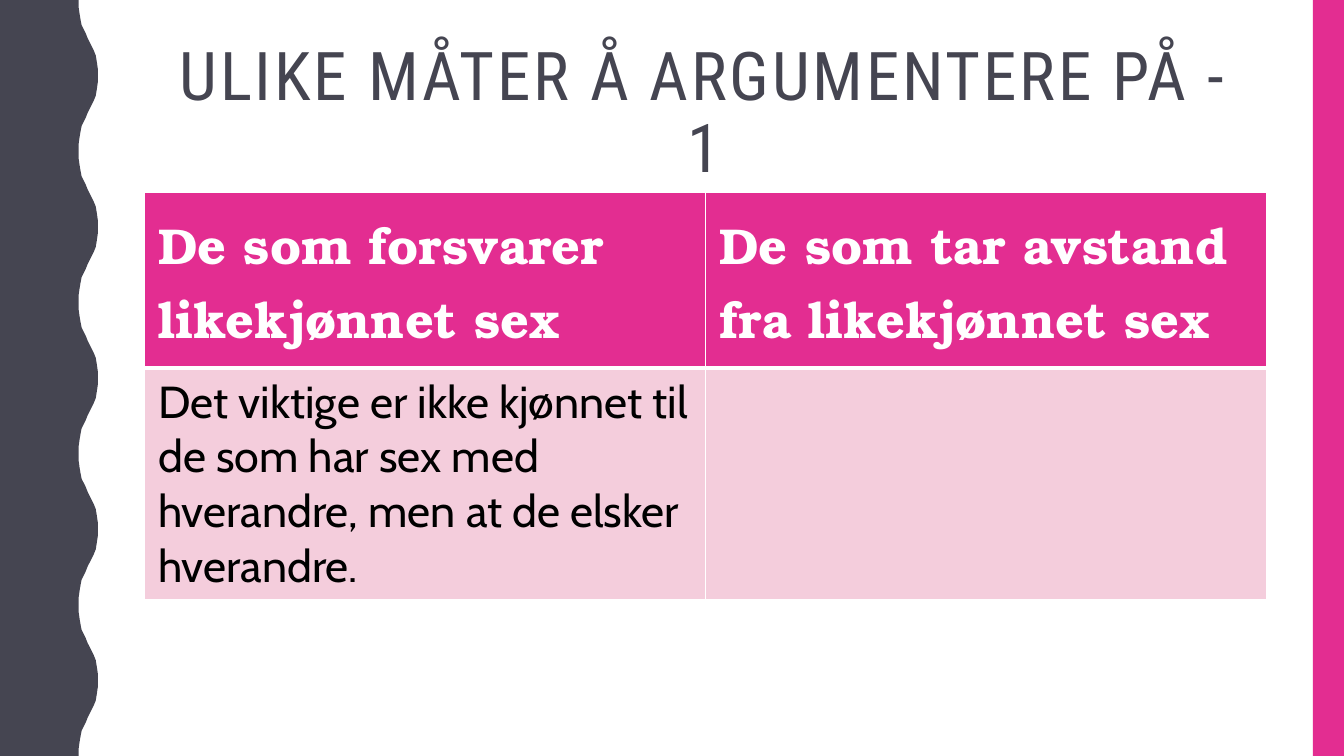
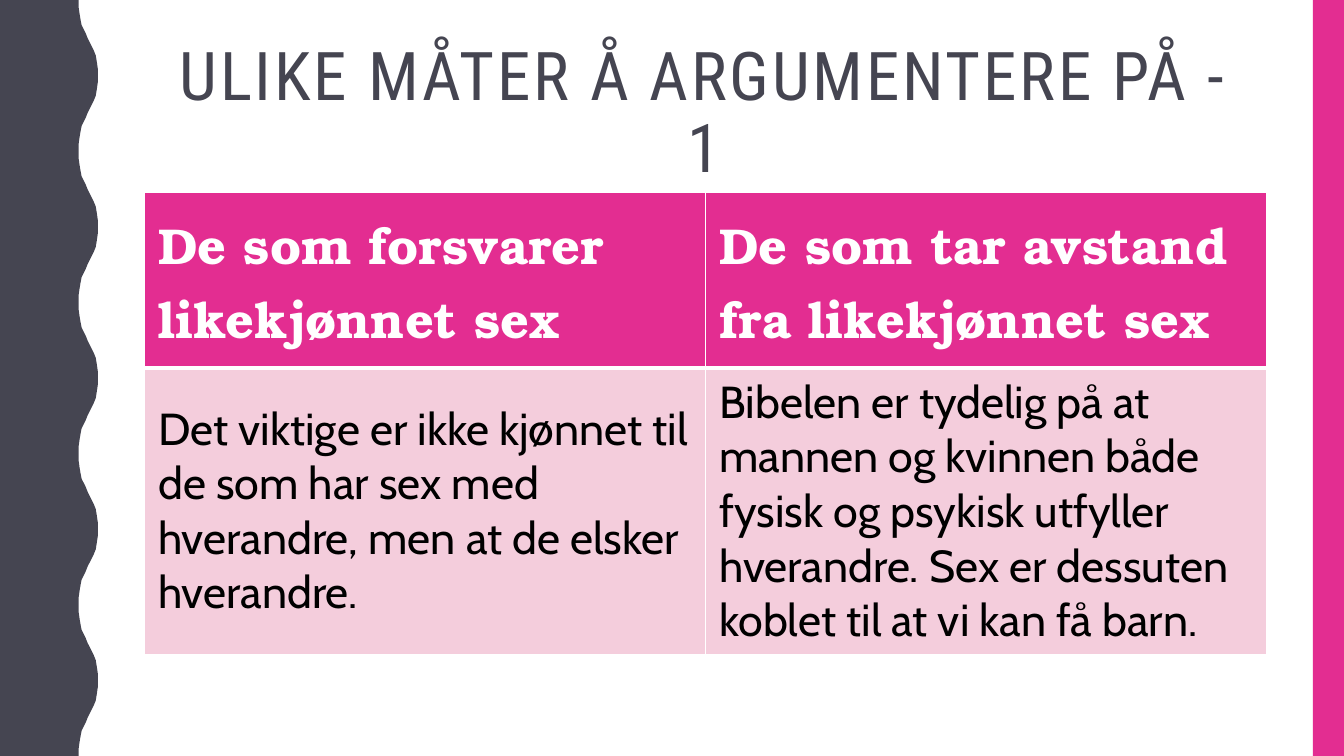
from lxml.etree import SubElement
from pptx import Presentation
from pptx.dml.color import RGBColor
from pptx.enum.shapes import MSO_SHAPE
from pptx.enum.text import MSO_ANCHOR, PP_ALIGN
from pptx.oxml.ns import qn
from pptx.util import Inches, Pt

SLATE = RGBColor(0x45, 0x45, 0x51)
PINK = RGBColor(0xE3, 0x2D, 0x91)
PALE_PINK = RGBColor(0xF4, 0xCD, 0xDC)
WHITE = RGBColor(0xFF, 0xFF, 0xFF)
BLACK = RGBColor(0, 0, 0)

TITLE_FONT, HEADING_FONT, BODY_FONT = "Roboto Condensed", "TeX Gyre Bonum", "Cabin"
WIDTH, HEIGHT = 13.33, 7.5
HEADING_HEIGHT = 1.74

# Outline of the wave from trough to crest, as (x, y) in inches
HALF_WAVE = [(0.78, 0), (0.78, 0.07), (0.79, 0.14), (0.8, 0.2), (0.81, 0.25),
             (0.83, 0.29), (0.85, 0.33), (0.87, 0.38), (0.89, 0.42), (0.91, 0.46),
             (0.93, 0.5), (0.95, 0.55), (0.96, 0.61), (0.97, 0.68), (0.97, 0.75)]
WAVE_LENGTH = 1.5

TITLE = "ULIKE MÅTER Å ARGUMENTERE PÅ - 1"
HEADINGS = ["De som forsvarer likekjønnet sex", "De som tar avstand fra likekjønnet sex"]
DEFENCE = ("Det viktige er ikke kjønnet til de som har sex med hverandre, "
           "men at de elsker hverandre.")
OBJECTION = ("Bibelen er tydelig på at mannen og kvinnen både fysisk og psykisk "
             "utfyller hverandre. Sex er dessuten koblet til at vi kan få barn.")


def paint(shape, color):
    shape.shadow.inherit = False
    shape.fill.solid()
    shape.fill.fore_color.rgb = color
    shape.line.fill.background()


def add_wave_band(slide, left, top, height):
    falling = [(x, WAVE_LENGTH - y) for x, y in reversed(HALF_WAVE[:-1])]
    wave = HALF_WAVE + falling
    edge = [(left + x, top + y + WAVE_LENGTH * turn)
            for turn in range(round(height / WAVE_LENGTH)) for x, y in wave]
    outline = edge + [(left, top + height)]
    builder = slide.shapes.build_freeform(Inches(left), Inches(top))
    builder.add_line_segments([(Inches(x), Inches(y)) for x, y in outline], close=True)
    paint(builder.convert_to_shape(), SLATE)


def add_side_bar(slide, left, top, width, height):
    bar = slide.shapes.add_shape(MSO_SHAPE.RECTANGLE, Inches(left), Inches(top),
                                 Inches(width), Inches(height))
    paint(bar, PINK)


def set_font(paragraph, name, size, color, bold=False):
    font = paragraph.font
    font.name, font.size, font.bold = name, Pt(size), bold
    font.color.rgb = color


def add_title(slide, left, top, width, height, text):
    frame = slide.shapes.add_textbox(Inches(left), Inches(top), Inches(width),
                                     Inches(height)).text_frame
    frame.word_wrap = True
    paragraph = frame.paragraphs[0]
    paragraph.alignment = PP_ALIGN.CENTER
    paragraph.line_spacing = 0.9
    run = paragraph.add_run()
    run.text = text
    set_font(paragraph, TITLE_FONT, 48, SLATE)
    run.font._element.set("spc", "200")


def set_borders(cell, **widths):
    """Give the cell white borders; widths are in points, by side."""
    properties = cell._tc.get_or_add_tcPr()
    for side in ("L", "R", "T", "B"):
        border = SubElement(properties, qn(f"a:ln{side}"), w=str(Pt(widths.get(side, 1))))
        fill = SubElement(border, qn("a:solidFill"))
        SubElement(fill, qn("a:srgbClr"), val=str(WHITE))


def fill_cell(cell, text, color, margin):
    cell.fill.solid()
    cell.fill.fore_color.rgb = color
    cell.vertical_anchor = MSO_ANCHOR.MIDDLE
    cell.margin_left = cell.margin_right = Inches(0.14)
    cell.margin_top = cell.margin_bottom = Inches(margin)
    cell.text = text


def add_argument_table(slide, left, top, width, height, arguments):
    table = slide.shapes.add_table(2, len(HEADINGS), Inches(left), Inches(top),
                                   Inches(width), Inches(height)).table
    table.rows[0].height = Inches(HEADING_HEIGHT)
    table.rows[1].height = Inches(height - HEADING_HEIGHT)
    for column, (heading, argument) in enumerate(zip(HEADINGS, arguments)):
        heading_cell, argument_cell = table.cell(0, column), table.cell(1, column)
        set_borders(heading_cell, B=3)
        fill_cell(heading_cell, heading, PINK, 0.14)
        set_font(heading_cell.text_frame.paragraphs[0], HEADING_FONT, 36, WHITE, bold=True)
        set_borders(argument_cell, T=3)
        fill_cell(argument_cell, argument, PALE_PINK, 0.07)
        if argument:
            set_font(argument_cell.text_frame.paragraphs[0], BODY_FONT, 32, BLACK)


def add_argument_slide(deck, arguments, table_height):
    slide = deck.slides.add_slide(deck.slide_layouts[6])
    add_wave_band(slide, 0, 0, HEIGHT)
    add_side_bar(slide, 13.02, 0, 0.31, HEIGHT)
    add_title(slide, 1.56, 0.37, 10.85, 1.85, TITLE)
    add_argument_table(slide, 1.43, 1.91, 11.13, table_height, arguments)


def main():
    deck = Presentation()
    deck.slide_width, deck.slide_height = Inches(WIDTH), Inches(HEIGHT)
    add_argument_slide(deck, [DEFENCE, ""], 4.04)
    add_argument_slide(deck, [DEFENCE, OBJECTION], 4.58)
    deck.save("out.pptx")


if __name__ == "__main__":
    main()
